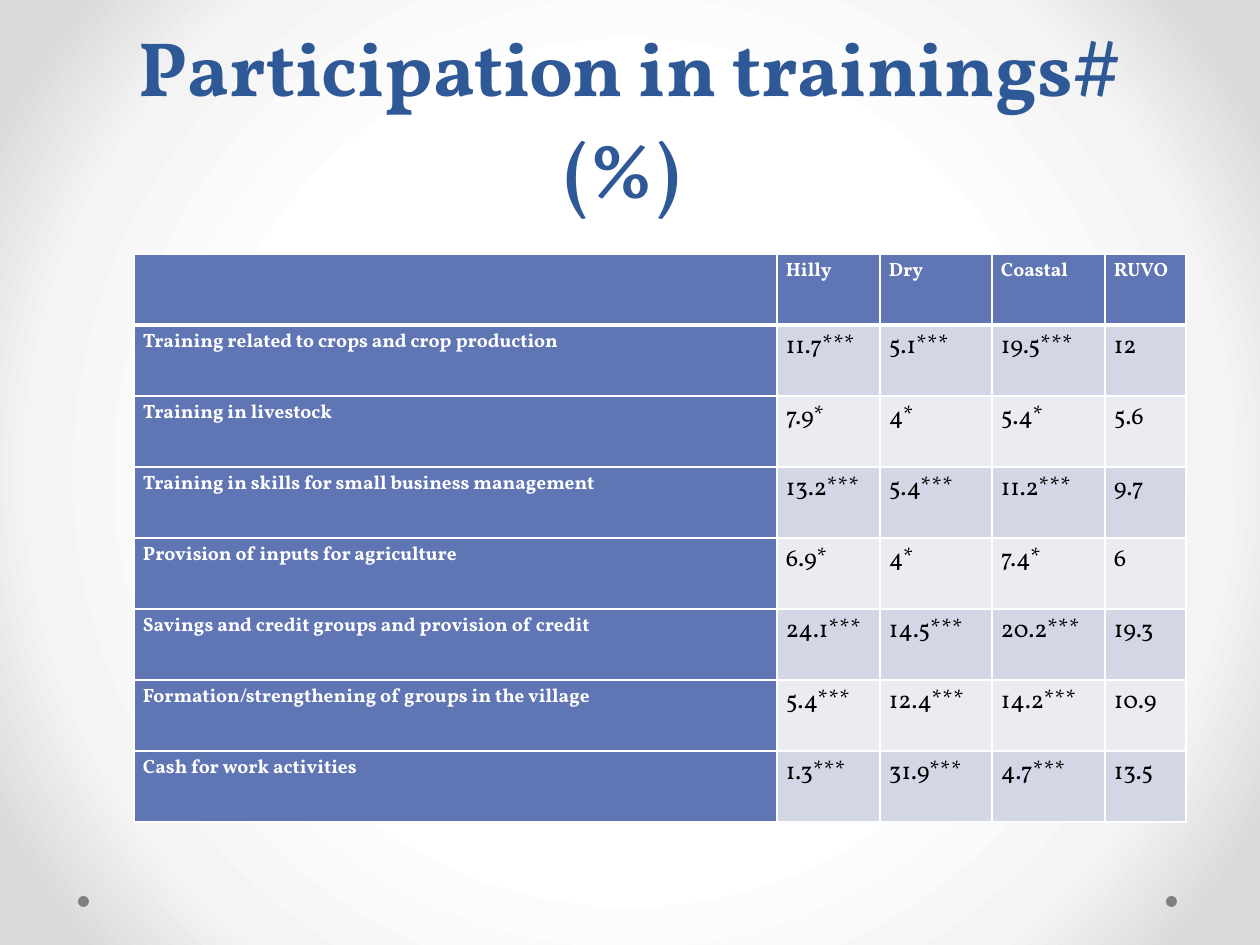
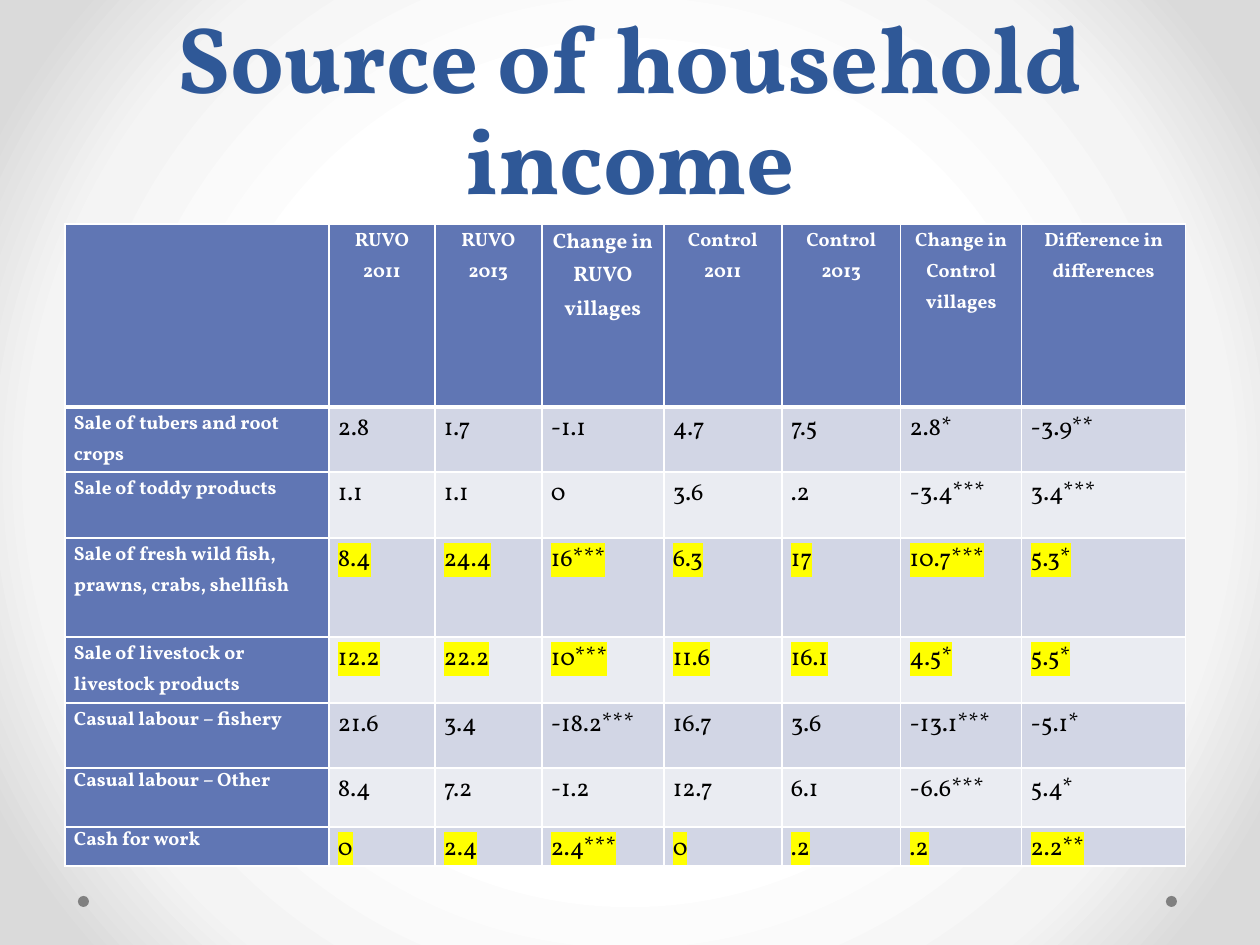
from dataclasses import dataclass, replace

from lxml import etree
from pptx import Presentation
from pptx.dml.color import RGBColor
from pptx.enum.shapes import MSO_SHAPE
from pptx.enum.text import MSO_ANCHOR, PP_ALIGN
from pptx.oxml.ns import qn
from pptx.util import Emu, Pt

EMU_PER_PX = 914400 / 126
FONT = "Vollkorn"
TITLE_BLUE = "2F5897"
HEADING_BLUE = "6076B4"
BAND_FILLS = ("D2D6E5", "EAECF2")
WHITE, BLACK, DOT_GREY, YELLOW = "FFFFFF", "000000", "808080", "FFFF00"
BACKDROP_STOPS = ((50, "FFFFFF"), (76, "F4F4F4"), (92, "DADADA"))


@dataclass(frozen=True)
class TextStyle:
    size: int
    color: str
    bold: bool = False
    align: PP_ALIGN = PP_ALIGN.LEFT
    line_spacing: float = 1.15
    spacing: int = 6
    highlight: str = ""


HEADING = TextStyle(11, WHITE, bold=True)
FIGURE = TextStyle(14, BLACK)
KEY_FIGURE = replace(FIGURE, highlight=YELLOW)
CENTRED = replace(HEADING, align=PP_ALIGN.CENTER)
CENTRED_TIGHT = replace(CENTRED, spacing=0)
SOURCE_LABEL = replace(HEADING, spacing=2)
WORK_LABEL = replace(HEADING, spacing=0, line_spacing=1.0)

TRAINING_COLUMNS = (643, 103, 112, 113, 81)
TRAINING_ROW_HEIGHT = 71
TRAINING_HEADINGS = ("Hilly", "Dry", "Coastal", "RUVO")
TRAININGS = (
    ("Training related to crops and crop production", "11.7*** 5.1*** 19.5*** 12"),
    ("Training in livestock", "7.9* 4* 5.4* 5.6"),
    ("Training in skills for small business management", "13.2*** 5.4*** 11.2*** 9.7"),
    ("Provision of inputs for agriculture", "6.9* 4* 7.4* 6"),
    ("Savings and credit groups and provision of credit", "24.1*** 14.5*** 20.2*** 19.3"),
    ("Formation/strengthening of groups in the village", "5.4*** 12.4*** 14.2*** 10.9"),
    ("Cash for work activities", "1.3*** 31.9*** 4.7*** 13.5"),
)

INCOME_COLUMNS = (264, 106, 107, 122, 118, 119, 121, 164)
INCOME_ROW_HEIGHTS = (183, 65, 66, 99, 66, 65, 59, 39)
INCOME_HEADINGS = (
    ("RUVO 2011", CENTRED),
    ("RUVO 2013", CENTRED),
    ("Change in RUVO villages", replace(CENTRED_TIGHT, size=12)),
    ("Control 2011", CENTRED),
    ("Control 2013", CENTRED),
    ("Change in Control villages", CENTRED_TIGHT),
    ("Difference in differences", CENTRED_TIGHT),
)
INCOME_SOURCES = (
    ("Sale of tubers and root crops", SOURCE_LABEL,
     "2.8 1.7 -1.1 4.7 7.5 2.8* -3.9**", FIGURE),
    ("Sale of toddy products", SOURCE_LABEL,
     "1.1 1.1 0 3.6 .2 -3.4*** 3.4***", FIGURE),
    ("Sale of fresh wild fish, prawns, crabs, shellfish", SOURCE_LABEL,
     "8.4 24.4 16*** 6.3 17 10.7*** 5.3*", KEY_FIGURE),
    ("Sale of livestock or livestock products", SOURCE_LABEL,
     "12.2 22.2 10*** 11.6 16.1 4.5* 5.5*", KEY_FIGURE),
    ("Casual labour – fishery", SOURCE_LABEL,
     "21.6 3.4 -18.2*** 16.7 3.6 -13.1*** -5.1*", FIGURE),
    ("Casual labour – Other", WORK_LABEL,
     "8.4 7.2 -1.2 12.7 6.1 -6.6*** 5.4*", FIGURE),
    ("Cash for work", WORK_LABEL,
     "0 2.4 2.4*** 0 .2 .2 2.2**", KEY_FIGURE),
)


def px(length):
    return Emu(round(length * EMU_PER_PX))


def rgb(hex_color):
    return RGBColor.from_string(hex_color)


def add_color(parent, hex_color):
    etree.SubElement(parent, qn("a:srgbClr"), val=hex_color)


def set_backdrop(master):
    """Give every slide the radial white-to-grey background."""
    fill = master.background.fill
    fill.gradient()
    gradient = master.element.find(f".//{qn('p:bgPr')}/{qn('a:gradFill')}")
    for child in list(gradient):
        gradient.remove(child)
    stops = etree.SubElement(gradient, qn("a:gsLst"))
    for percent, color in BACKDROP_STOPS:
        add_color(etree.SubElement(stops, qn("a:gs"), pos=str(percent * 1000)), color)
    circle = etree.SubElement(gradient, qn("a:path"), path="circle")
    etree.SubElement(circle, qn("a:fillToRect"), l="50000", t="50000", r="50000", b="50000")


def add_run(paragraph, text, style):
    run = paragraph.add_run()
    run.text = text
    font = run.font
    font.size, font.bold, font.name = Pt(style.size), style.bold, FONT
    font.color.rgb = rgb(style.color)
    if style.highlight:
        properties = run._r.get_or_add_rPr()
        highlight = etree.Element(qn("a:highlight"))
        add_color(highlight, style.highlight)
        properties.find(qn("a:solidFill")).addnext(highlight)


def add_dots(slide):
    for left in (1166, 78):
        dot = slide.shapes.add_shape(MSO_SHAPE.OVAL, px(left), px(896), px(11), px(11))
        dot.shadow.inherit = False
        dot.fill.solid()
        dot.fill.fore_color.rgb = rgb(DOT_GREY)
        dot.line.fill.background()


def add_title(slide, text, size):
    frame = slide.shapes.add_textbox(px(63), px(0), px(1134), px(220)).text_frame
    frame.word_wrap = True
    frame.vertical_anchor = MSO_ANCHOR.BOTTOM
    paragraph = frame.paragraphs[0]
    paragraph.alignment = PP_ALIGN.CENTER
    paragraph.line_spacing = Pt(58)
    add_run(paragraph, text, TextStyle(size, TITLE_BLUE, bold=True))


def add_titled_slide(deck, title, title_size):
    slide = deck.slides.add_slide(deck.slide_layouts[6])
    add_dots(slide)
    add_title(slide, title, title_size)
    return slide


def set_borders(cell, top=1, bottom=1):
    properties = cell._tc.get_or_add_tcPr()
    widths = (("L", 1), ("R", 1), ("T", top), ("B", bottom))
    for index, (side, points) in enumerate(widths):
        border = etree.Element(qn(f"a:ln{side}"), w=str(Pt(points)))
        add_color(etree.SubElement(border, qn("a:solidFill")), WHITE)
        properties.insert(index, border)


def fill_cell(cell, text, style, color):
    cell.margin_left = cell.margin_right = px(9)
    cell.margin_top = cell.margin_bottom = 0
    cell.fill.solid()
    cell.fill.fore_color.rgb = rgb(color)
    if text:
        paragraph = cell.text_frame.paragraphs[0]
        paragraph.alignment = style.align
        paragraph.line_spacing = style.line_spacing
        paragraph.space_before = paragraph.space_after = Pt(style.spacing)
        add_run(paragraph, text, style)


def add_results_table(slide, left, top, widths, heights, headings, results):
    """Headings are (text, style); results are (label, style, figures, style)."""
    table = slide.shapes.add_table(
        len(heights), len(widths), px(left), px(top), px(sum(widths)), px(sum(heights))
    ).table
    table.horz_banding = False
    for column, width in zip(table.columns, widths):
        column.width = px(width)
    for row, height in zip(table.rows, heights):
        row.height = px(height)

    for column, (text, style) in enumerate((("", HEADING), *headings)):
        cell = table.cell(0, column)
        fill_cell(cell, text, style, HEADING_BLUE)
        set_borders(cell, bottom=3)

    for row, (label, label_style, figures, figure_style) in enumerate(results, start=1):
        fill_cell(table.cell(row, 0), label, label_style, HEADING_BLUE)
        for column, figure in enumerate(figures.split(), start=1):
            fill_cell(table.cell(row, column), figure, figure_style, BAND_FILLS[(row - 1) % 2])
        for column in range(len(widths)):
            set_borders(table.cell(row, column), top=3 if row == 1 else 1)


def add_training_slide(deck):
    slide = add_titled_slide(deck, "Participation in trainings# (%) ", 44)
    headings = [(area, HEADING) for area in TRAINING_HEADINGS]
    results = [(label, HEADING, figures, FIGURE) for label, figures in TRAININGS]
    heights = [TRAINING_ROW_HEIGHT] * (len(results) + 1)
    add_results_table(slide, 134, 254, TRAINING_COLUMNS, heights, headings, results)


def add_income_slide(deck):
    slide = add_titled_slide(deck, "Source of household income", 54)
    add_results_table(slide, 65, 224, INCOME_COLUMNS, INCOME_ROW_HEIGHTS,
                      INCOME_HEADINGS, INCOME_SOURCES)


def main():
    deck = Presentation()
    deck.slide_width, deck.slide_height = px(1260), px(945)
    set_backdrop(deck.slide_master)
    add_training_slide(deck)
    add_income_slide(deck)
    deck.save("out.pptx")


if __name__ == "__main__":
    main()
